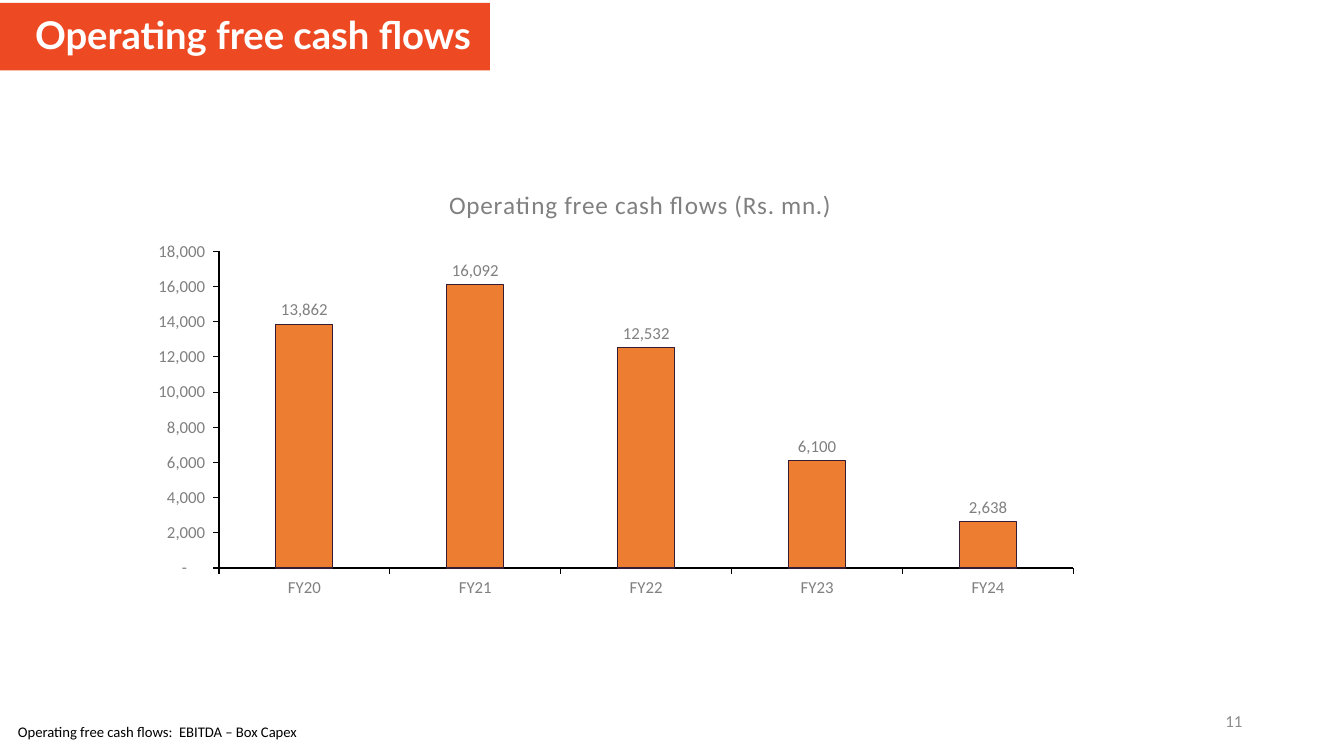
from pptx import Presentation
from pptx.chart.data import CategoryChartData
from pptx.dml.color import RGBColor
from pptx.enum.chart import XL_CHART_TYPE, XL_LABEL_POSITION, XL_TICK_MARK
from pptx.enum.shapes import MSO_SHAPE
from pptx.enum.text import MSO_ANCHOR, PP_ALIGN
from pptx.oxml import parse_xml
from pptx.oxml.ns import nsdecls
from pptx.util import Inches, Pt

GREY, BLACK = "808080", "000000"
NUMBER = r'_(* #,##0_);_(* \(#,##0\);_(* "-"??_);_('


def style(font, color, **values):
    font.color.rgb = RGBColor.from_string(color)
    for name, value in values.items():
        setattr(font, name, value)


def layout(x, y, w=None, h=None):
    share = {"x": x, "y": y, "w": w, "h": h}
    target = '<c:layoutTarget val="inner"/>' if w else ""
    modes = "".join(f'<c:{k}Mode val="edge"/>' for k in "xy")
    sizes = "".join(f'<c:{k} val="{v}"/>' for k, v in share.items() if v)
    return parse_xml(f'<c:layout {nsdecls("c")}><c:manualLayout>{target}'
                     f'{modes}{sizes}</c:manualLayout></c:layout>')


prs = Presentation()
prs.slide_width, prs.slide_height = Inches(13.33), Inches(7.5)
s = prs.slides.add_slide(prs.slide_layouts[6])

# Heading band
sp = s.shapes.add_shape(MSO_SHAPE.RECTANGLE, 0, Inches(0.03), Inches(4.86), Inches(0.67))
sp.shadow.inherit = False
sp.fill.solid()
sp.fill.fore_color.rgb = RGBColor.from_string("ED4A24")
sp.line.fill.background()

# Footnote and page number
note = s.shapes.add_textbox(Inches(0.08), Inches(7.12), Inches(12.25), Inches(0.28))
page = s.shapes.add_textbox(Inches(9.42), Inches(6.95), Inches(3), Inches(0.4))

# Text of the three boxes
for box, text, align, anchor, color, fmt in (
    (sp, "Operating free cash flows", PP_ALIGN.LEFT, MSO_ANCHOR.MIDDLE, "FFFFFF",
     {"size": Pt(27.3), "name": "Lato", "bold": True}),
    (note, "Operating free cash flows:  EBITDA – Box Capex", PP_ALIGN.LEFT,
     MSO_ANCHOR.TOP, BLACK, {"size": Pt(10.5), "name": "Calibri"}),
    (page, "11", PP_ALIGN.RIGHT, MSO_ANCHOR.MIDDLE, "8C8C8C",
     {"size": Pt(12), "name": "Calibri"}),
):
    tf = box.text_frame
    tf.word_wrap, tf.vertical_anchor = True, anchor
    p = tf.paragraphs[0]
    p.alignment = align
    r = p.add_run()
    r.text = text
    style(r.font, color, **fmt)
p = sp.text_frame.paragraphs[0]
p.line_spacing = 0.9
p._p.get_or_add_pPr().set("marL", str(Inches(0.25)))

# Column chart
data = CategoryChartData(number_format=NUMBER)
data.categories = [f"FY{year}" for year in range(20, 25)]
data.add_series("Series 1", (13862, 16092, 12532, 6100, 2638))
chart = s.shapes.add_chart(XL_CHART_TYPE.COLUMN_CLUSTERED, Inches(1.36), Inches(1.57),
                           Inches(10.03), Inches(5.07), data).chart
style(chart.font, BLACK, size=Pt(10), name="Calibri")
chart.has_legend = False
chart._chartSpace.chart.plotArea.insert(0, layout(0.081, 0.182, 0.845, 0.62))
for old in chart._chartSpace.chart.plotArea.findall(layout(0, 0).tag)[1:]:
    old.getparent().remove(old)

# Chart title
chart.has_title = True
title = chart.chart_title
r = title.text_frame.paragraphs[0].add_run()
r.text = "Operating free cash flows (Rs. mn.)"
style(r.font, GREY, size=Pt(18), name="Calibri", bold=False)
r.font._element.set("spc", "50")
title.include_in_layout = False
for old in title._element.findall(layout(0, 0).tag):
    title._element.remove(old)
title._element.tx.addnext(layout(0.304, 0.047))

# Axes
for axis in (chart.category_axis, chart.value_axis):
    axis.has_major_gridlines = False
    axis.major_tick_mark = XL_TICK_MARK.OUTSIDE
    style(axis.tick_labels.font, GREY, size=Pt(12), name="Calibri")
    axis.format.line.color.rgb = RGBColor.from_string(BLACK)
    axis.format.line.width = Pt(0.75)
axis.minimum_scale, axis.maximum_scale, axis.major_unit = 0, 18000, 2000
axis.tick_labels.number_format = NUMBER
axis.tick_labels.number_format_is_linked = False

# Columns and their labels
plot = chart.plots[0]
plot.gap_width, plot.overlap, plot.vary_by_categories = 200, -24, False
series = plot.series[0]
series.format.fill.solid()
series.format.fill.fore_color.rgb = RGBColor.from_string("ED7D31")
series.format.line.color.rgb = RGBColor.from_string("351C34")
series.format.line.width = Pt(0.75)
labels = series.data_labels
for name, value in {"show_value": True, "position": XL_LABEL_POSITION.OUTSIDE_END,
                    "number_format": NUMBER, "number_format_is_linked": False}.items():
    setattr(labels, name, value)
style(labels.font, GREY, size=Pt(12), name="Calibri")

prs.save("out.pptx")
